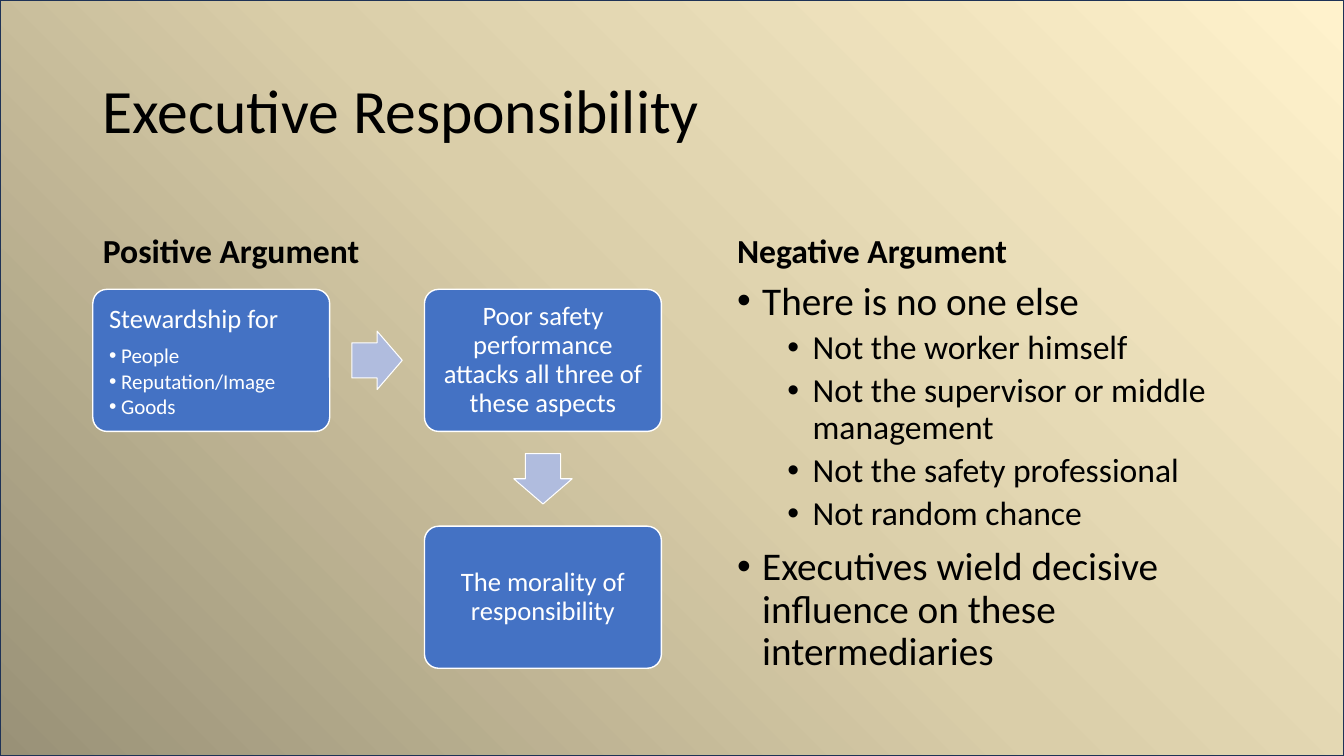
from lxml import etree
from pptx import Presentation
from pptx.dml.color import RGBColor
from pptx.enum.shapes import MSO_SHAPE
from pptx.enum.text import MSO_ANCHOR, MSO_AUTO_SIZE, PP_ALIGN
from pptx.oxml import parse_xml
from pptx.oxml.ns import qn
from pptx.util import Inches, Pt

RECT, ROUND, ARROW = MSO_SHAPE.RECTANGLE, MSO_SHAPE.ROUNDED_RECTANGLE, MSO_SHAPE.RIGHT_ARROW
TOP, MIDDLE, BOTTOM = MSO_ANCHOR.TOP, MSO_ANCHOR.MIDDLE, MSO_ANCHOR.BOTTOM
LEFT, CENTER = PP_ALIGN.LEFT, PP_ALIGN.CENTER
NO_FIT = MSO_AUTO_SIZE.NONE

BLACK = RGBColor(0x00, 0x00, 0x00)
WHITE = RGBColor(0xFF, 0xFF, 0xFF)
BLUE = RGBColor(0x44, 0x72, 0xC4)
PALE_BLUE = RGBColor(0xB0, 0xBC, 0xDE)
NAVY = RGBColor(0x1E, 0x32, 0x56)
GOLDS = [(0, RGBColor(0x99, 0x91, 0x77)), (50, RGBColor(0xDA, 0xCE, 0xA9)),
         (100, RGBColor(0xFF, 0xF2, 0xCC))]

FONT = "Calibri"
WIDTH, HEIGHT = 13.33, 7.5
CARD_W, CARD_H, CARD_GAP = 2.35, 1.41, 0.94
ARROW_W, ARROW_H = 0.5, 0.58

STEWARDSHIP = [("Stewardship for", 0), ("People", 1), ("Reputation/Image", 1), ("Goods", 1)]
ATTACKS = [("Poor safety performance attacks all three of these aspects", 0)]
MORALITY = [("The morality of responsibility", 0)]
NEGATIVE = [
    ("There is no one else", 0),
    ("Not the worker himself", 1),
    ("Not the supervisor or middle management", 1),
    ("Not the safety professional", 1),
    ("Not random chance", 1),
    ("Executives wield decisive influence on these intermediaries", 0),
]

HEADING_STYLE = [dict(size=24, bold=True)]
LIST_STYLE = [dict(size=28, before=10, indent=0.25, hang=0.25),
              dict(size=24, before=5, indent=0.75, hang=0.25)]
CARD_STYLE = [dict(size=19, color=WHITE, after=8),
              dict(size=15, color=WHITE, after=2, indent=0.12, hang=0.12)]


def set_attrs(target, values):
    """Set each named value on the target."""
    for name, value in values.items():
        setattr(target, name, value)


def add_bullet(p, indent, hang):
    """Give a paragraph a round bullet with a hanging indent."""
    pPr = p._p.get_or_add_pPr()
    pPr.set("marL", str(Inches(indent)))
    pPr.set("indent", str(-Inches(hang)))
    etree.SubElement(pPr, qn("a:buFont")).set("typeface", "Arial")
    etree.SubElement(pPr, qn("a:buChar")).set("char", "•")


def write(tf, items, styles, anchor=TOP, align=LEFT):
    """Fill a text frame with (text, level) items styled by level."""
    set_attrs(tf, dict(word_wrap=True, auto_size=NO_FIT, vertical_anchor=anchor))
    for i, (text, level) in enumerate(items):
        style = styles[level]
        p = tf.add_paragraph() if i else tf.paragraphs[0]
        if "indent" in style:
            add_bullet(p, style["indent"], style["hang"])
        set_attrs(p, dict(level=level, alignment=align, line_spacing=0.9,
                          space_before=Pt(style.get("before", 0) if i else 0),
                          space_after=Pt(style.get("after", 0))))
        r = p.add_run()
        r.text = text
        set_attrs(r.font, dict(name=FONT, size=Pt(style["size"]), bold=style.get("bold", False)))
        r.font.color.rgb = style.get("color", BLACK)


def place(sp, box):
    """Move a shape to a box given in inches."""
    set_attrs(sp, dict(zip(("left", "top", "width", "height"), map(Inches, box))))


def add_shape(s, kind, box, fill, line, weight):
    """Add a flat shape with a solid fill and an outline."""
    sp = s.shapes.add_shape(kind, *map(Inches, box))
    sp.shadow.inherit = False
    sp.fill.solid()
    sp.fill.fore_color.rgb = fill
    sp.line.color.rgb = line
    sp.line.width = Pt(weight)
    return sp


def add_background(s, box):
    """Put a gold gradient behind everything, darkest at bottom left."""
    sp = add_shape(s, RECT, box, GOLDS[-1][1], NAVY, 1)
    stops = "".join(f'<a:gs pos="{pos * 1000}"><a:srgbClr val="{color}"/></a:gs>'
                    for pos, color in GOLDS)
    gradient = parse_xml(
        '<a:gradFill xmlns:a="http://schemas.openxmlformats.org/drawingml/2006/main" '
        f'rotWithShape="1"><a:gsLst>{stops}</a:gsLst><a:path path="circle">'
        '<a:fillToRect t="100000" r="100000"/></a:path></a:gradFill>')
    solid = sp.element.spPr.find(qn("a:solidFill"))
    solid.getparent().replace(solid, gradient)
    s.shapes.title.element.addprevious(sp.element)


def add_card(s, box, items, anchor, align):
    """Add a blue rounded card with its text."""
    sp = add_shape(s, ROUND, box, BLUE, WHITE, 1)
    sp.adjustments[0] = 0.1
    inset = Inches(0.12)
    set_attrs(sp.text_frame, dict(margin_left=inset, margin_right=inset,
                                  margin_top=inset, margin_bottom=inset))
    write(sp.text_frame, items, CARD_STYLE, anchor, align)


def add_arrow(s, cx, cy, rotation):
    """Add a pale block arrow centred on a point."""
    box = (cx - ARROW_W / 2, cy - ARROW_H / 2, ARROW_W, ARROW_H)
    sp = add_shape(s, ARROW, box, PALE_BLUE, WHITE, 0.75)
    sp.adjustments[0] = 0.6
    sp.rotation = rotation


def add_flow(s, left, top):
    """Lay out three cards, right then down, joined by arrows."""
    right, lower = left + CARD_W + CARD_GAP, top + CARD_H + CARD_GAP
    add_card(s, (left, top, CARD_W, CARD_H), STEWARDSHIP, TOP, LEFT)
    add_arrow(s, right - CARD_GAP / 2, top + CARD_H / 2, 0)
    add_card(s, (right, top, CARD_W, CARD_H), ATTACKS, MIDDLE, CENTER)
    add_arrow(s, right + CARD_W / 2, lower - CARD_GAP / 2, 90)
    add_card(s, (right, lower, CARD_W, CARD_H), MORALITY, MIDDLE, CENTER)


def fill_placeholder(sp, box, items, styles, anchor):
    """Place a placeholder and write its text."""
    place(sp, box)
    write(sp.text_frame, items, styles, anchor)


def build_comparison(prs):
    """Build the slide that sets the two arguments side by side."""
    s = prs.slides.add_slide(prs.slide_layouts.get_by_name("Comparison"))
    title, left_head, left_body, right_head, right_body = s.placeholders
    left_body.element.getparent().remove(left_body.element)
    add_background(s, (0, 0, WIDTH, HEIGHT))
    fill_placeholder(title, (0.92, 0.4, 11.5, 1.45),
                     [("Executive Responsibility", 0)], [dict(size=44)], MIDDLE)
    fill_placeholder(left_head, (0.92, 1.84, 5.64, 0.9),
                     [("Positive Argument", 0)], HEADING_STYLE, BOTTOM)
    add_flow(s, 0.92, 2.87)
    fill_placeholder(right_head, (7.21, 1.84, 5.67, 0.9),
                     [("Negative Argument", 0)], HEADING_STYLE, BOTTOM)
    fill_placeholder(right_body, (7.21, 2.74, 5.67, 4.03), NEGATIVE, LIST_STYLE, TOP)


def main():
    """Create and save the presentation."""
    prs = Presentation()
    set_attrs(prs, dict(slide_width=Inches(WIDTH), slide_height=Inches(HEIGHT)))
    build_comparison(prs)
    prs.save("out.pptx")


if __name__ == "__main__":
    main()
